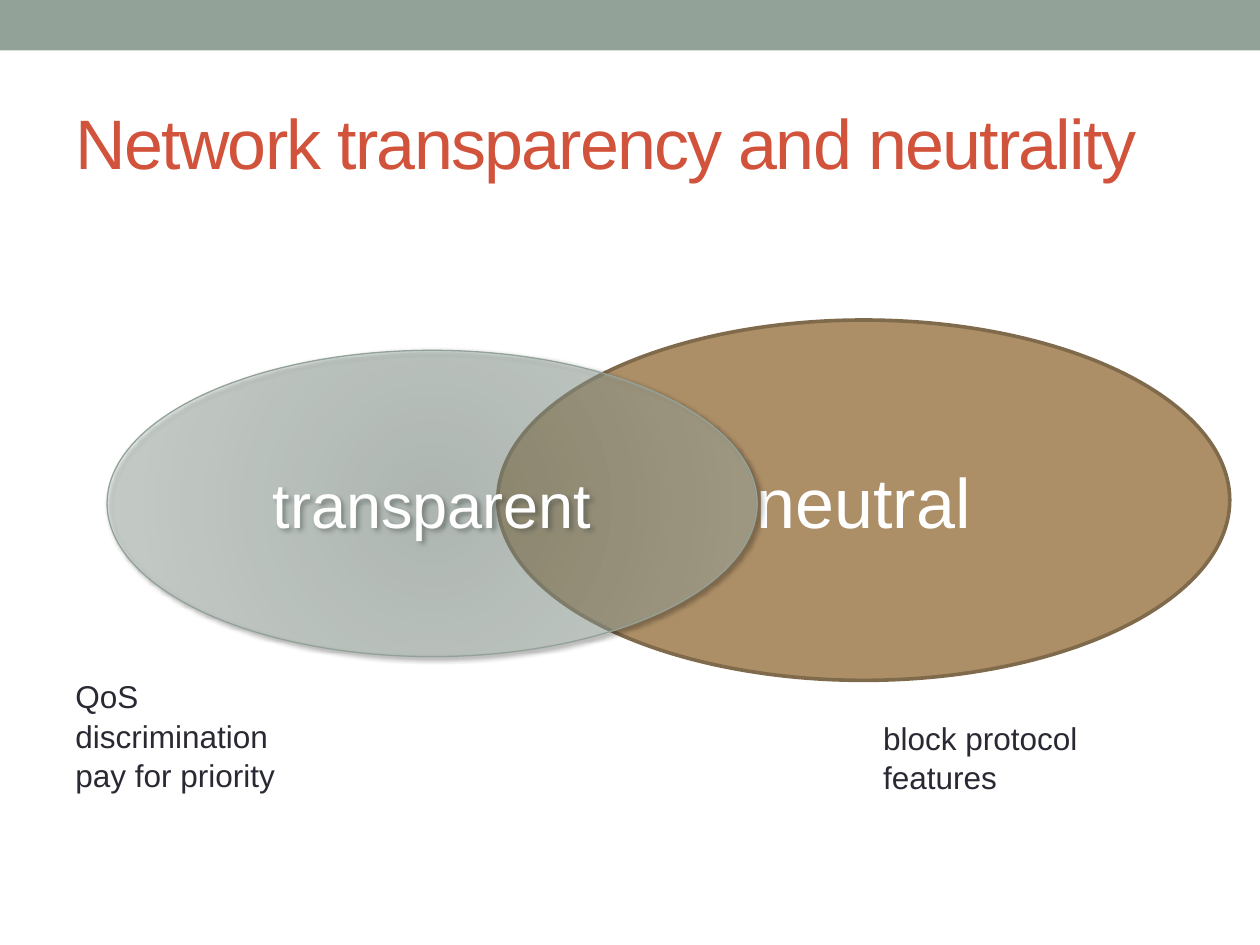
"""Build a slide with two overlapping ellipses on network transparency and neutrality."""
from pptx import Presentation
from pptx.dml.color import RGBColor
from pptx.enum.shapes import MSO_SHAPE as Shape
from pptx.enum.text import MSO_ANCHOR as Anchor, PP_ALIGN as Align
from pptx.oxml import parse_xml
from pptx.oxml.ns import nsdecls, qn
from pptx.util import Pt

SAGE = RGBColor(0x93, 0xA2, 0x99)
RED = RGBColor(0xD2, 0x53, 0x3C)
TAN = RGBColor(0xAD, 0x8F, 0x67)
BROWN = RGBColor(0x80, 0x6A, 0x4C)
DARK = RGBColor(0x29, 0x29, 0x34)
WHITE = RGBColor(0xFF, 0xFF, 0xFF)
GLASS_CENTRE = RGBColor(0x91, 0xA4, 0x99)
GLASS_EDGE = RGBColor(0xCC, 0xDD, 0xD3)

TITLE = "Network transparency and neutrality"
NEUTRAL = ("neutral", (284.4, 182.9, 418.3, 205.9), 40, BROWN, 2.08)
TRANSPARENT = ("transparent", (61.2, 200.2, 371.5, 175), 36, SAGE, 0.75)
NOTES = [
    (["QoS discrimination", "pay for priority"], (36, 382.3, 154.1, 51.1)),
    (["block protocol features"], (497.5, 406.1, 186.5, 28.8)),
]


def style(paragraph, size, color):
    paragraph.font.name = "Arial"
    paragraph.font.size = Pt(size)
    paragraph.font.color.rgb = color


def add_shape(slide, kind, box, fill):
    shape = slide.shapes.add_shape(kind, *map(Pt, box))
    shape.shadow.inherit = False
    if fill is not None:
        shape.fill.solid()
        shape.fill.fore_color.rgb = fill
    return shape


def add_ellipse(slide, label, box, size, line, width, fill=None):
    ellipse = add_shape(slide, Shape.OVAL, box, fill)
    ellipse.line.color.rgb = line
    ellipse.line.width = Pt(width)
    frame = ellipse.text_frame
    frame.text = label
    frame.vertical_anchor = Anchor.MIDDLE
    frame.paragraphs[0].alignment = Align.CENTER
    style(frame.paragraphs[0], size, WHITE)
    return ellipse


def make_glassy(shape):
    stops = "".join(
        f'<a:gs pos="{position}"><a:srgbClr val="{color}"><a:alpha val="40000"/></a:srgbClr></a:gs>'
        for position, color in ((0, GLASS_CENTRE), (100000, GLASS_EDGE)))
    properties = shape._element.spPr
    properties.find(qn("a:prstGeom")).addnext(parse_xml(
        f'<a:gradFill {nsdecls("a")} rotWithShape="1"><a:gsLst>{stops}</a:gsLst>'
        '<a:path path="circle"><a:fillToRect l="50000" t="50000" r="50000" b="50000"/></a:path>'
        '</a:gradFill>'))
    properties.find(qn("a:effectLst")).append(parse_xml(
        f'<a:outerShdw {nsdecls("a")} blurRad="{Pt(3)}" dist="{Pt(2)}" dir="2700000" rotWithShape="0">'
        '<a:srgbClr val="000000"><a:alpha val="60000"/></a:srgbClr></a:outerShdw>'))


def add_title(slide):
    title = slide.shapes.title
    title.left, title.top, title.width, title.height = map(Pt, (36, 41.8, 648, 77.8))
    title.text_frame.text = TITLE
    title.text_frame.vertical_anchor = Anchor.MIDDLE
    paragraph = title.text_frame.paragraphs[0]
    paragraph.alignment = Align.LEFT
    style(paragraph, 40, RED)
    paragraph.runs[0].font._element.set("spc", "-100")


def add_note(slide, lines, box):
    frame = slide.shapes.add_textbox(*map(Pt, box)).text_frame
    frame.word_wrap = True
    frame.text = "\n".join(lines)
    for paragraph in frame.paragraphs:
        paragraph.line_spacing = 1.05
        style(paragraph, 18, DARK)


def main():
    presentation = Presentation()
    presentation.slide_width, presentation.slide_height = Pt(720), Pt(540)
    slide = presentation.slides.add_slide(presentation.slide_layouts[5])
    band = add_shape(slide, Shape.RECTANGLE, (0, 0, 720, 28.8), SAGE)
    band.line.fill.background()
    add_title(slide)
    add_ellipse(slide, *NEUTRAL, fill=TAN)
    make_glassy(add_ellipse(slide, *TRANSPARENT))
    for lines, box in NOTES:
        add_note(slide, lines, box)
    presentation.save("out.pptx")


if __name__ == "__main__":
    main()
